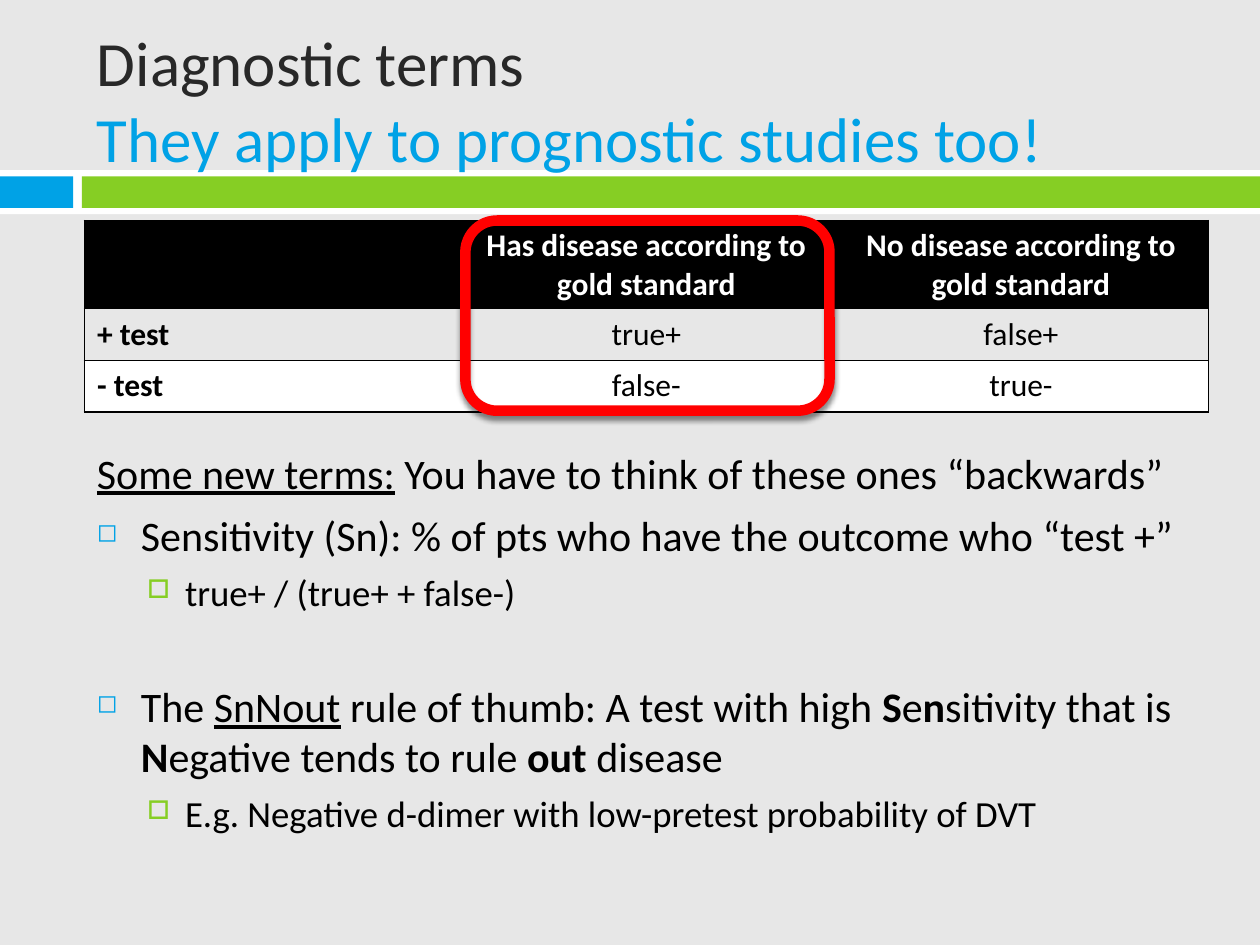
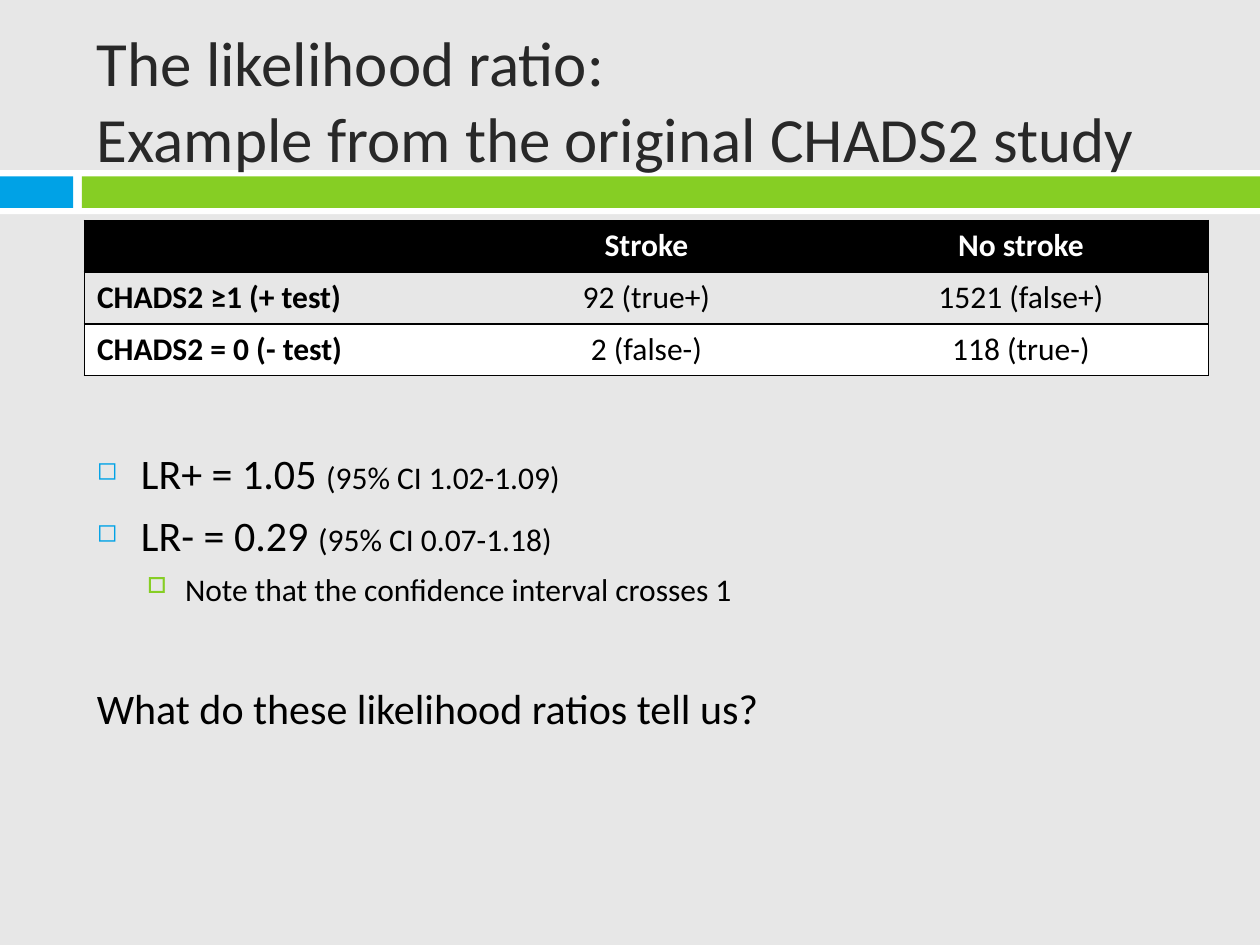
import pptx
import pptx.dml.color
import pptx.enum.shapes
import pptx.enum.text
import pptx.oxml
import pptx.oxml.ns
import pptx.util
from lxml import etree

Inches = pptx.util.Inches
Pt = pptx.util.Pt
qn = pptx.oxml.ns.qn
SHAPE = pptx.enum.shapes.MSO_SHAPE
CENTER = pptx.enum.text.PP_ALIGN.CENTER
MIDDLE = pptx.enum.text.MSO_ANCHOR.MIDDLE

FONT = "Calibri"
BLACK, WHITE, GREY, INK = "000000", "FFFFFF", "E7E7E7", "282828"
BLUE, GREEN, RED = "00A2E6", "86CE24", "FF0000"

LEFT, WIDTH = 0.67, 8.92
TITLE_BOX = (LEFT, 0.25, WIDTH, 1.08)
BAND_BOX = (0, 1.35, 10, 0.35)
TABLE_BOX = (LEFT, 1.75, WIDTH)
BODY_BOX = (LEFT, 3.5, WIDTH, 3.17)
ROW_HEIGHT = 0.41

# level: (left margin, hanging indent, space before, bullet, colour, size in %)
LEVELS = {
    None: (0, 0, 7, None, None, None),
    0: (0.35, -0.35, 7, "◻", BLUE, 60),
    1: (0.7, -0.3, 5.5, "□", GREEN, 70),
}


def rgb(color):
    return pptx.dml.color.RGBColor.from_string(color)


def lengths(box):
    return [Inches(v) for v in box]


def add_text(p, text, size=24, color=BLACK, bold=False, underline=False):
    """Add text to a paragraph, with a line break at each newline."""
    for i, line in enumerate(text.split("\n")):
        if i:
            p.add_line_break()
        if line:
            r = p.add_run()
            r.text = line
            r.font.name = FONT
            r.font.size = Pt(size)
            r.font.bold = bold
            r.font.underline = underline
            r.font.color.rgb = rgb(color)


def add_runs(p, runs, **shared):
    """Add (text, format) pairs; each format overrides the shared one."""
    for text, fmt in runs:
        add_text(p, text, **{**shared, **fmt})


def add_frame(slide, box):
    tf = slide.shapes.add_textbox(*lengths(box)).text_frame
    tf.word_wrap = True
    return tf


def add_rect(slide, box, color):
    sp = slide.shapes.add_shape(SHAPE.RECTANGLE, *lengths(box))
    sp.shadow.inherit = False
    sp.fill.solid()
    sp.fill.fore_color.rgb = rgb(color)
    sp.line.fill.background()


def add_band(slide, box):
    x, y, w, h = box
    add_rect(slide, box, WHITE)
    for color, start, end in ((BLUE, 0, 0.58), (GREEN, 0.65, w)):
        add_rect(slide, (x + start, y + 0.05, end - start, h - 0.1), color)


def add_title(slide, box, runs):
    tf = add_frame(slide, box)
    tf.vertical_anchor = MIDDLE
    add_runs(tf.paragraphs[0], runs, size=36, color=INK)


def set_border(cell, index, side, visible):
    ln = etree.Element(qn(f"a:ln{side}"), w=str(Pt(1)))
    if visible:
        fill = etree.SubElement(ln, qn("a:solidFill"))
        etree.SubElement(fill, qn("a:srgbClr"), val=BLACK)
    else:
        etree.SubElement(ln, qn("a:noFill"))
    cell._tc.get_or_add_tcPr().insert(index, ln)


def add_test_table(slide, box, rows, header_height=ROW_HEIGHT):
    x, y, w = box
    last = len(rows[0]) - 1
    heights = [header_height] + [ROW_HEIGHT] * (len(rows) - 1)
    table = slide.shapes.add_table(
        len(rows), last + 1, *lengths((x, y, w, sum(heights)))).table
    for column in table.columns:
        column.width = Inches(w / (last + 1))
    for i, (texts, fill) in enumerate(zip(rows, (BLACK, GREY, WHITE))):
        table.rows[i].height = Inches(heights[i])
        for j, text in enumerate(texts):
            cell = table.cell(i, j)
            cell.fill.solid()
            cell.fill.fore_color.rgb = rgb(fill)
            edges = (("L", j == 0), ("R", j == last), ("T", True), ("B", True))
            for k, (side, visible) in enumerate(edges):
                set_border(cell, k, side, visible)
            p = cell.text_frame.paragraphs[0]
            if j:
                p.alignment = CENTER
            add_text(p, text, size=18, bold=i == 0 or j == 0,
                     color=BLACK if i else WHITE)


def add_highlight(slide, box):
    """Draw a red rounded frame with a soft shadow."""
    sp = slide.shapes.add_shape(SHAPE.ROUNDED_RECTANGLE, *lengths(box))
    sp.fill.background()
    sp.line.color.rgb = rgb(RED)
    sp.line.width = Pt(6)
    sp.shadow.inherit = False
    effects = sp._element.spPr.find(qn("a:effectLst"))
    shadow = etree.SubElement(
        effects, qn("a:outerShdw"), blurRad=str(Pt(3)), dist=str(Pt(2.4)),
        dir=str(90 * 60000), rotWithShape="0")
    color = etree.SubElement(shadow, qn("a:srgbClr"), val=BLACK)
    etree.SubElement(color, qn("a:alpha"), val="45000")


def format_level(p, level, gap):
    margin, indent, before, bullet, color, size = LEVELS[level]
    p.space_before = Pt(before + gap)
    pPr = p._p.get_or_add_pPr()
    pPr.set("marL", str(Inches(margin)))
    pPr.set("indent", str(Inches(indent)))
    if bullet:
        p.level = level
        clr = etree.SubElement(pPr, qn("a:buClr"))
        etree.SubElement(clr, qn("a:srgbClr"), val=color)
        etree.SubElement(pPr, qn("a:buSzPct"), val=str(size * 1000))
        etree.SubElement(pPr, qn("a:buChar"), char=bullet)


def add_body(slide, box, items):
    """Add (level, extra space before, size, runs) items as paragraphs."""
    tf = add_frame(slide, box)
    for i, (level, gap, size, runs) in enumerate(items):
        p = tf.add_paragraph() if i else tf.paragraphs[0]
        format_level(p, level, gap)
        add_runs(p, runs, size=size)


def add_base_slide(prs, title):
    slide = prs.slides.add_slide(prs.slide_layouts[6])
    slide.background.fill.solid()
    slide.background.fill.fore_color.rgb = rgb(GREY)
    add_band(slide, BAND_BOX)
    add_title(slide, TITLE_BOX, title)
    return slide


def build_diagnostic_terms(prs):
    slide = add_base_slide(prs, [
        ("Diagnostic terms\n", {}),
        ("They apply to prognostic studies too!", {"color": BLUE})])
    add_body(slide, BODY_BOX, [
        (None, 0, 24, [
            ("Some new terms:", {"underline": True}),
            (" You have to think of these ones “backwards”", {})]),
        (0, 0, 24, [
            ("Sensitivity (Sn): % of pts who have the outcome who “test +”", {})]),
        (1, 0, 21, [("true+ / (true+ + false-)", {})]),
        (0, 31, 24, [
            ("The ", {}),
            ("SnNout", {"underline": True}),
            (" rule of thumb: A test with high ", {}),
            ("S", {"bold": True}),
            ("e", {}),
            ("n", {"bold": True}),
            ("sitivity that is ", {}),
            ("N", {"bold": True}),
            ("egative tends to rule ", {}),
            ("out ", {"bold": True}),
            ("disease", {})]),
        (1, 0, 21, [
            ("E.g. Negative d-dimer with low-pretest probability of DVT", {})]),
    ])
    add_test_table(slide, TABLE_BOX, [
        ("", "Has disease according to gold standard",
         "No disease according to gold standard"),
        ("+ test", "true+", "false+"),
        ("- test", "false-", "true-")], header_height=0.7)
    x, y, w = TABLE_BOX
    add_highlight(slide, (x + w / 3 + 0.05, y, 2.89, 1.51))


def build_likelihood_ratio(prs):
    slide = add_base_slide(prs, [
        ("The likelihood ratio:\nExample from the original CHADS2 study", {})])
    add_test_table(slide, TABLE_BOX, [
        ("", "Stroke", "No stroke"),
        ("CHADS2 ≥1 (+ test)", "92 (true+)", "1521 (false+)"),
        ("CHADS2 = 0 (- test)", "2 (false-)", "118 (true-)")])
    add_body(slide, BODY_BOX, [
        (0, 0, 24, [("LR+ = 1.05 ", {}), ("(95% CI 1.02-1.09)", {"size": 18})]),
        (0, 0, 24, [("LR- = 0.29 ", {}), ("(95% CI 0.07-1.18)", {"size": 18})]),
        (1, 0, 18, [("Note that the confidence interval crosses 1", {})]),
        (None, 36, 24, [("What do these likelihood ratios tell us?", {})]),
    ])


def main():
    prs = pptx.Presentation()
    prs.slide_width, prs.slide_height = Inches(10), Inches(7.5)
    build_diagnostic_terms(prs)
    build_likelihood_ratio(prs)
    prs.save("out.pptx")


if __name__ == "__main__":
    main()
